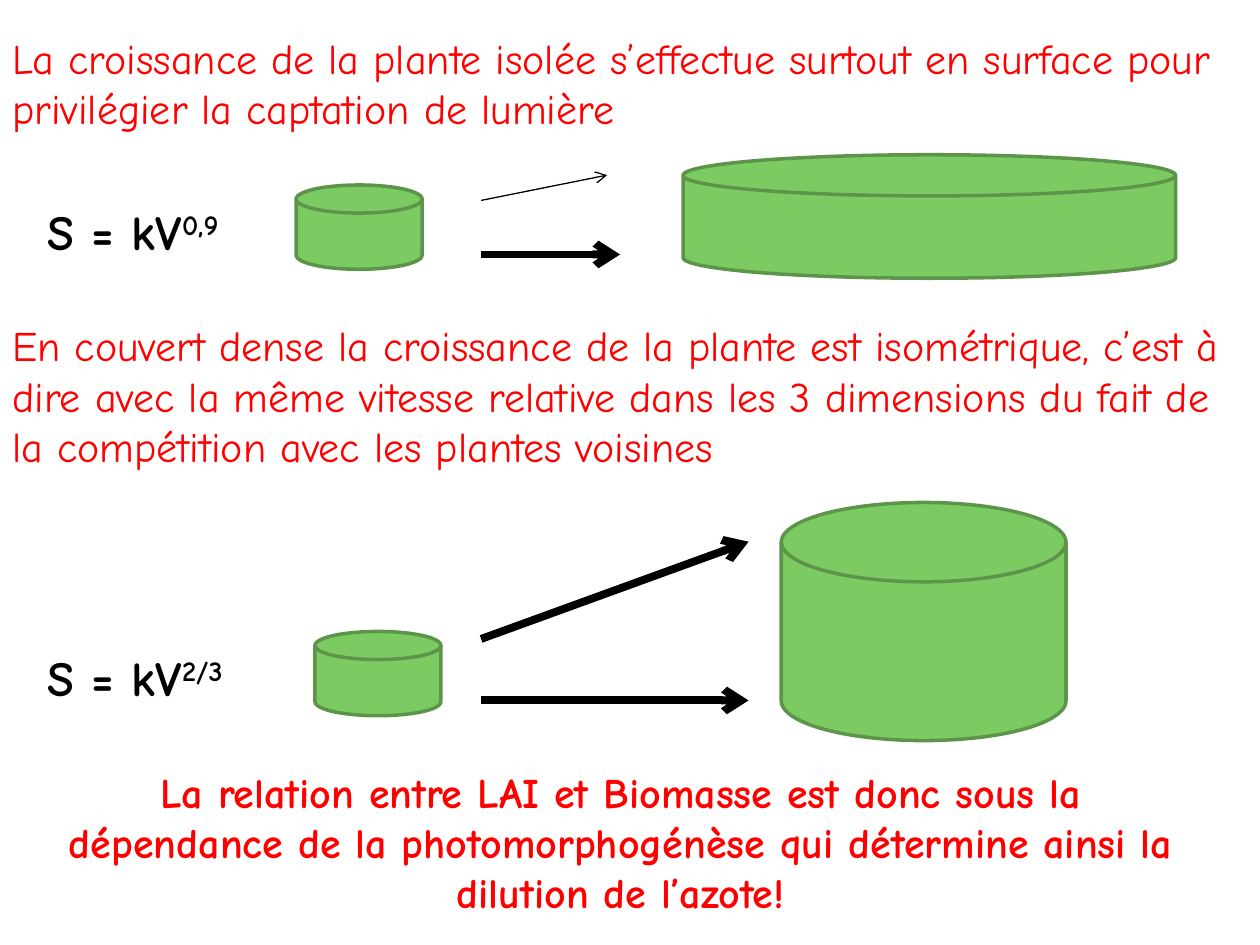
from lxml.etree import SubElement
from pptx import Presentation
from pptx.dml.color import RGBColor
from pptx.enum.shapes import MSO_CONNECTOR, MSO_SHAPE
from pptx.enum.text import MSO_AUTO_SIZE, PP_ALIGN
from pptx.oxml.ns import qn
from pptx.util import Cm, Pt

FONT = "Comic Neue"
RED, BLACK, GREEN, DARK_GREEN = "FF0000", "000000", "7CCA62", "5C9549"
PAGE_WIDTH, PAGE_HEIGHT = 25.4, 19.05
ARROW_START = 9.7
PLANT_SIZE = (2.54, 1.7)


def color(hex_code):
    """Turn a hex string into a colour."""
    return RGBColor.from_string(hex_code)


def add_text(slide, box, parts, size, hex_code, bold=False, wrap=True, align=None):
    """Write one paragraph, with any second part raised as an exponent."""
    frame = slide.shapes.add_textbox(*map(Cm, box)).text_frame
    frame.word_wrap = wrap
    frame.auto_size = MSO_AUTO_SIZE.SHAPE_TO_FIT_TEXT
    paragraph = frame.paragraphs[0]
    paragraph.alignment = align
    for position, part in enumerate(parts):
        run = paragraph.add_run()
        run.text = part
        run.font.name = FONT
        run.font.size = Pt(size)
        run.font.bold = bold
        run.font.color.rgb = color(hex_code)
        if position:
            run._r.get_or_add_rPr().set("baseline", "30000")


def add_plant(slide, left, top, size):
    """Draw a plant as a green cylinder."""
    plant = slide.shapes.add_shape(
        MSO_SHAPE.FLOWCHART_MAGNETIC_DISK, *map(Cm, (left, top, *size))
    )
    plant.shadow.inherit = False
    plant.fill.solid()
    plant.fill.fore_color.rgb = color(GREEN)
    plant.line.color.rgb = color(DARK_GREEN)
    plant.line.width = Pt(2)


def add_arrow(slide, start, end, weight):
    """Draw a black growth arrow."""
    arrow = slide.shapes.add_connector(
        MSO_CONNECTOR.STRAIGHT, *map(Cm, (*start, *end))
    )
    arrow.line.color.rgb = color(BLACK)
    arrow.line.width = Pt(weight)
    properties = arrow._element.spPr
    SubElement(properties.find(qn("a:ln")), qn("a:tailEnd"), type="arrow")
    SubElement(properties, qn("a:effectLst"))


def add_growth(slide, box, statement, exponent, equation_top, young, grown, grown_size, arrows):
    """Place one growth mode: statement, equation, plants and arrows."""
    left, top, width, statement_height = box
    add_plant(slide, left + young[0], top + young[1], PLANT_SIZE)
    add_plant(slide, left + grown[0], top + grown[1], grown_size)
    add_text(slide, box, [statement], 24, RED)
    equation_box = (left + 0.71, top + equation_top, 5, 1.45)
    add_text(slide, equation_box, ["S = kV", exponent], 28, BLACK, bold=True, wrap=False)
    for start_y, end_x, end_y, weight in arrows:
        start = (left + ARROW_START, top + start_y)
        add_arrow(slide, start, (left + end_x, top + end_y), weight)


def add_conclusion(slide, box):
    """Write the centred conclusion."""
    conclusion = (
        "La relation entre LAI et Biomasse est donc sous la dépendance de la "
        "photomorphogénèse qui détermine ainsi la dilution de l’azote!"
    )
    add_text(slide, box, [conclusion], 24, RED, bold=True, align=PP_ALIGN.CENTER)


def main():
    """Build and save the slide."""
    presentation = Presentation()
    presentation.slide_width = Cm(PAGE_WIDTH)
    presentation.slide_height = Cm(PAGE_HEIGHT)
    slide = presentation.slides.add_slide(presentation.slide_layouts[6])
    add_growth(
        slide,
        (0, 0.53, PAGE_WIDTH, 2.31),
        "La croissance de la plante isolée s’effectue surtout en surface pour "
        "privilégier la captation de lumière",
        "0,9",
        equation_top=3.41,
        young=(5.97, 3.2),
        grown=(13.77, 2.59),
        grown_size=(9.93, 2.49),
        arrows=[(4.6, 12.5, 4.6, 4.5), (3.51, 12.24, 3, 0.75)],
    )
    add_growth(
        slide,
        (0, 6.32, PAGE_WIDTH, 3.33),
        "En couvert dense la croissance de la plante est isométrique, c’est à dire "
        "avec la même vitesse relative dans les 3 dimensions du fait de la "
        "compétition avec les plantes voisines",
        "2/3",
        equation_top=6.61,
        young=(6.35, 6.41),
        grown=(15.75, 3.81),
        grown_size=(5.74, 4.8),
        arrows=[(7.8, 15.09, 7.8, 4.5), (6.56, 15.09, 4.6, 4.5)],
    )
    add_conclusion(slide, (0.71, 15.32, 23.6, 3.33))
    presentation.save("out.pptx")


if __name__ == "__main__":
    main()
